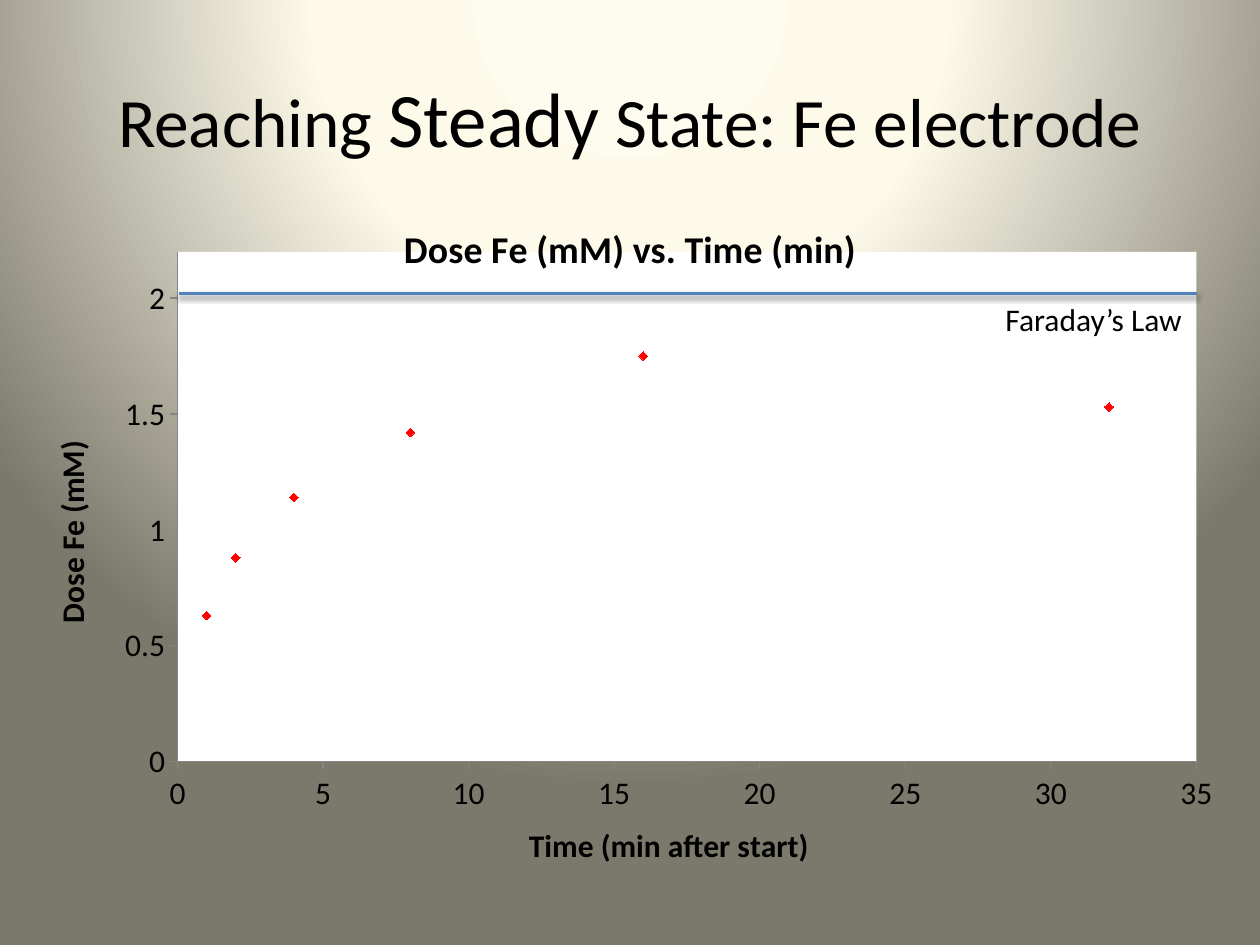
import pptx
import pptx.chart.data
import pptx.dml.color
import pptx.enum.chart
import pptx.enum.shapes
import pptx.enum.text
import pptx.oxml
import pptx.oxml.ns
import pptx.util

Cm, Pt = pptx.util.Cm, pptx.util.Pt
qn = pptx.oxml.ns.qn
NS = " ".join(pptx.oxml.ns.nsdecls(prefix) for prefix in ("a", "c"))


def rgb(value):
    return pptx.dml.color.RGBColor.from_string(value)


def set_font(font, size, bold=False):
    formats = {"name": "Calibri", "size": Pt(size), "bold": bold}
    for attribute, value in formats.items():
        setattr(font, attribute, value)
    font.color.rgb = rgb("000000")


presentation = pptx.Presentation()
presentation.slide_width, presentation.slide_height = Cm(25.4), Cm(19.05)
slide = presentation.slides.add_slide(presentation.slide_layouts[5])

# Background: a round gradient, light at the top
slide.background.fill.gradient()
gradient = slide.element.find(".//" + qn("a:gradFill"))
stops = "".join(
    f'<a:gs pos="{percent * 1000}"><a:srgbClr val="{color}"/></a:gs>'
    for percent, color in ((0, "FEFCEE"), (40, "FDFAEA"), (100, "7B796B"))
)
gradient.getparent().replace(gradient, pptx.oxml.parse_xml(
    f'<a:gradFill {NS} rotWithShape="1"><a:gsLst>{stops}</a:gsLst><a:path path="circle">'
    '<a:fillToRect l="50000" t="-80000" r="50000" b="180000"/></a:path></a:gradFill>'
))

# Heading
heading = slide.shapes.title
for attribute, value in {"left": 1.27, "top": 0.76, "width": 22.86, "height": 3.18}.items():
    setattr(heading, attribute, Cm(value))
heading.text_frame.vertical_anchor = pptx.enum.text.MSO_ANCHOR.MIDDLE
heading_line = heading.text_frame.paragraphs[0]
heading_line.alignment = pptx.enum.text.PP_ALIGN.CENTER
for words, size in (("Reaching ", 39.6), ("Steady", 44), (" State: Fe electrode", 39.6)):
    run = heading_line.add_run()
    run.text = words
    set_font(run.font, size)

# Dose over time
doses = pptx.chart.data.XyChartData()
dose_series = doses.add_series("Series 1")
for minutes, dose in ((1, 0.63), (2, 0.88), (4, 1.14), (8, 1.42), (16, 1.75), (32, 1.53)):
    dose_series.add_data_point(minutes, dose)
chart = slide.shapes.add_chart(
    pptx.enum.chart.XL_CHART_TYPE.XY_SCATTER,
    Cm(0.79), Cm(3.94), Cm(23.83), Cm(13.69), doses,
).chart
chart.has_legend = False
set_font(chart.font, 18)

time_axis, dose_axis = chart.category_axis, chart.value_axis
for titled, words, size in (
    (chart, "Dose Fe (mM) vs. Time (min)", 21.6),
    (time_axis, "Time (min after start)", 18),
    (dose_axis, "Dose Fe (mM)", 18),
):
    title = titled.chart_title if titled is chart else titled.axis_title
    title.text_frame.text = words
    set_font(title.text_frame.paragraphs[0].runs[0].font, size, bold=True)

scales = (
    (time_axis, {"minimum_scale": 0, "maximum_scale": 35, "major_unit": 5}),
    (dose_axis, {"minimum_scale": 0, "maximum_scale": 2.2, "major_unit": 0.5}),
)
for axis, scale in scales:
    formats = {
        "has_major_gridlines": False,
        "major_tick_mark": pptx.enum.chart.XL_TICK_MARK.OUTSIDE,
        "minor_tick_mark": pptx.enum.chart.XL_TICK_MARK.NONE,
    }
    for attribute, value in {**formats, **scale}.items():
        setattr(axis, attribute, value)
    axis.format.line.color.rgb = rgb("868686")
    axis.tick_labels.number_format = "General"
    axis.tick_labels.number_format_is_linked = False

plot = chart.plots[0]
plot.vary_by_categories = False
points = plot.series[0]
points.smooth = False
points.format.line.fill.background()
points.marker.style = pptx.enum.chart.XL_MARKER_STYLE.DIAMOND
points.marker.size = 5
points.marker.format.fill.solid()
points.marker.format.fill.fore_color.rgb = rgb("FF0000")
points.marker.format.line.color.rgb = rgb("FF0000")

# Plot area: fixed inner place and a white fill
plot_area = chart.element.find(".//" + qn("c:plotArea"))
for old_layout in plot_area.findall(qn("c:layout")):
    plot_area.remove(old_layout)
place = "".join(
    f'<c:{part} val="{value}"/>'
    for part, value in (
        ("layoutTarget", "inner"), ("xMode", "edge"), ("yMode", "edge"),
        ("x", 0.117), ("y", 0.083), ("w", 0.862), ("h", 0.751),
    )
)
plot_area.insert(0, pptx.oxml.parse_xml(
    f"<c:layout {NS}><c:manualLayout>{place}</c:manualLayout></c:layout>"
))
plot_area.append(pptx.oxml.parse_xml(
    f'<c:spPr {NS}><a:solidFill><a:srgbClr val="FFFFFF"/></a:solidFill></c:spPr>'
))

# Dose predicted by Faraday's law
faraday_line = slide.shapes.add_connector(
    pptx.enum.shapes.MSO_CONNECTOR.STRAIGHT, Cm(3.6), Cm(5.92), Cm(24.13), Cm(5.92)
)
faraday_line.line.color.rgb = rgb("4F81BD")
faraday_line.line.width = Pt(2)
faraday_line.element.spPr.append(pptx.oxml.parse_xml(
    f'<a:effectLst {NS}><a:outerShdw blurRad="{Pt(3.1)}" dist="{Pt(1.6)}" dir="5400000" '
    'rotWithShape="0"><a:srgbClr val="000000"><a:alpha val="38000"/></a:srgbClr>'
    "</a:outerShdw></a:effectLst>"
))

faraday_label = slide.shapes.add_textbox(Cm(20.02), Cm(5.92), Cm(4.11), Cm(1.02)).text_frame
faraday_label.word_wrap = False
faraday_label.auto_size = pptx.enum.text.MSO_AUTO_SIZE.SHAPE_TO_FIT_TEXT
faraday_label.text = "Faraday’s Law"
set_font(faraday_label.paragraphs[0].runs[0].font, 18)

presentation.save("out.pptx")
